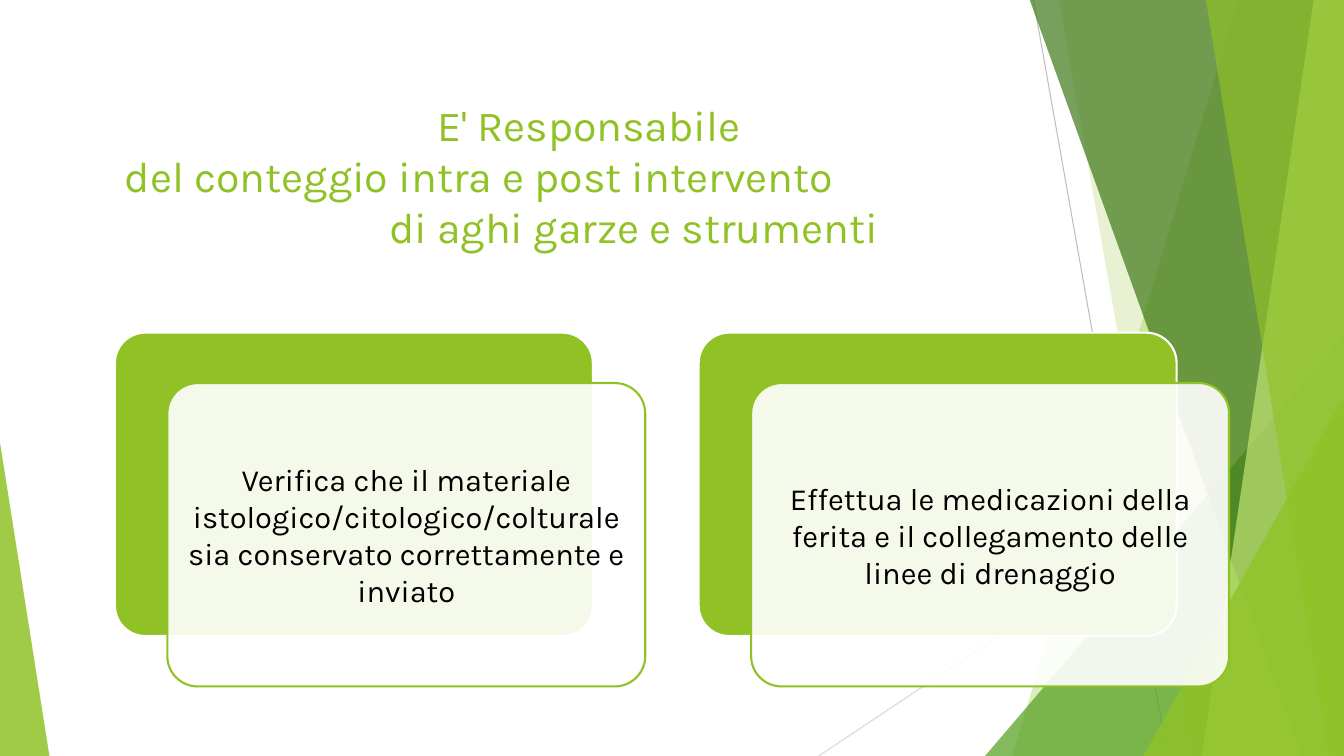
from pptx import Presentation
from pptx import util as u
from pptx.dml.color import RGBColor
from pptx.enum import shapes, text
from pptx.oxml.ns import qn
from lxml import etree

LIME = RGBColor(0x90, 0xC2, 0x26)
GREEN = RGBColor(0x54, 0xA0, 0x21)
FOREST = RGBColor(0x3F, 0x78, 0x19)
PALE = RGBColor(0xC0, 0xE4, 0x74)
GREY = RGBColor(0xBF, 0xBF, 0xBF)
SILVER = RGBColor(0xD9, 0xD9, 0xD9)
WHITE = RGBColor(0xFF, 0xFF, 0xFF)
BLACK = RGBColor(0, 0, 0)
WIDE, HIGH = 1333, 750
PX = 9144


def px(*vals):
    return [val * PX for val in vals]


class Deck:
    """Draws styled elements on one slide, with lengths in px."""

    def __init__(self, face):
        self.face = face
        self.prs = Presentation()
        self.prs.slide_width, self.prs.slide_height = px(WIDE, HIGH)
        self.slide = self.prs.slides.add_slide(self.prs.slide_layouts[6])
        self.items = self.slide.shapes

    def paint(self, shape, fill, alpha=100, edge=None):
        shape.shadow.inherit = False
        shape.fill.solid()
        shape.fill.fore_color.rgb = fill
        if alpha < 100:
            color = shape.fill._xPr.find(qn("a:solidFill"))[0]
            etree.SubElement(color, qn("a:alpha"), val=str(alpha * 1000))
        if edge is None:
            shape.line.fill.background()
        else:
            shape.line.color.rgb = edge
            shape.line.width = u.Pt(1.5)

    def line(self, start, end, color):
        line = self.items.add_connector(
            shapes.MSO_CONNECTOR.STRAIGHT, *px(*start, *end))
        line.line.color.rgb = color
        line.line.width = u.Pt(0.75)
        etree.SubElement(line._element.spPr, qn("a:effectLst"))

    def ribbon(self, top, foot, fill, alpha):
        pen = self.items.build_freeform(top, -1, scale=PX)
        pen.add_line_segments([(WIDE, -1), (WIDE, HIGH), (foot, HIGH)])
        self.paint(pen.convert_to_shape(), fill, alpha)

    def block(self, kind, box, adj, *style):
        shape = self.items.add_shape(kind, *px(*box))
        shape.adjustments[0] = adj
        self.paint(shape, *style)

    def wedge(self, box, tip, fill, alpha):
        self.block(shapes.MSO_SHAPE.ISOSCELES_TRIANGLE, box, tip, fill, alpha)

    def words(self, box, lines, size, color, align, pads):
        frame = self.items.add_textbox(*px(*box)).text_frame
        look = {"word_wrap": True, "vertical_anchor": text.MSO_ANCHOR.MIDDLE}
        sides = ("left", "top", "right", "bottom")
        look.update({f"margin_{side}": pad
                     for side, pad in zip(sides, px(*pads))})
        for key, val in look.items():
            setattr(frame, key, val)
        for num, (line, indent) in enumerate(lines):
            para = frame.add_paragraph() if num else frame.paragraphs[0]
            para.alignment = align
            if indent:
                para._p.get_or_add_pPr().set("marL", str(indent * PX))
            run = para.add_run()
            run.text = line
            font = {"name": self.face, "size": u.Pt(size)}
            for key, val in font.items():
                setattr(run.font, key, val)
            run.font.color.rgb = color

    def card(self, left, top, line):
        wide, high, pad = 474, 301, 9
        kind = shapes.MSO_SHAPE.ROUNDED_RECTANGLE
        self.block(kind, (left, top, wide, high), 0.1, LIME, 100, WHITE)
        left, top = left + 52, top + 50
        self.block(kind, (left, top, wide, high), 0.1, WHITE, 90, LIME)
        box = (left + pad, top + pad, wide - 2 * pad, high - 2 * pad)
        self.words(box, [(line, 0)], 22, BLACK,
                   text.PP_ALIGN.CENTER, (pad,) * 4)


def main():
    deck = Deck("Karla")
    deck.line((1025, 0), (1158, HIGH), GREY)
    deck.line((WIDE, 403), (812, HIGH), SILVER)
    deck.ribbon(1228, 1004, LIME, 30)
    deck.ribbon(1050, 1183, LIME, 20)
    deck.wedge((977, 333, 356, 417), 1, GREEN, 72)
    deck.ribbon(1021, 1291, FOREST, 70)
    deck.ribbon(1303, 1192, PALE, 70)
    deck.ribbon(1196, 1318, LIME, 65)
    deck.wedge((1134, 393, 199, 357), 1, LIME, 80)
    deck.wedge((0, 439, 49, 311), 0, LIME, 85)
    title = [("E' Responsabile", 310),
             ("del conteggio intra e post intervento", 0),
             ("di aghi garze e strumenti", 262)]
    deck.words((114, 89, 1113, 170), title, 30.6, LIME,
               text.PP_ALIGN.LEFT, (10, 5, 10, 5))
    cards = ["Verifica che il materiale istologico/citologico/colturale "
             "sia conservato correttamente e inviato",
             "Effettua le medicazioni della ferita e il collegamento "
             "delle linee di drenaggio"]
    for num, line in enumerate(cards):
        deck.card(114 + 579 * num, 330, line)
    deck.prs.save("out.pptx")


if __name__ == "__main__":
    main()
